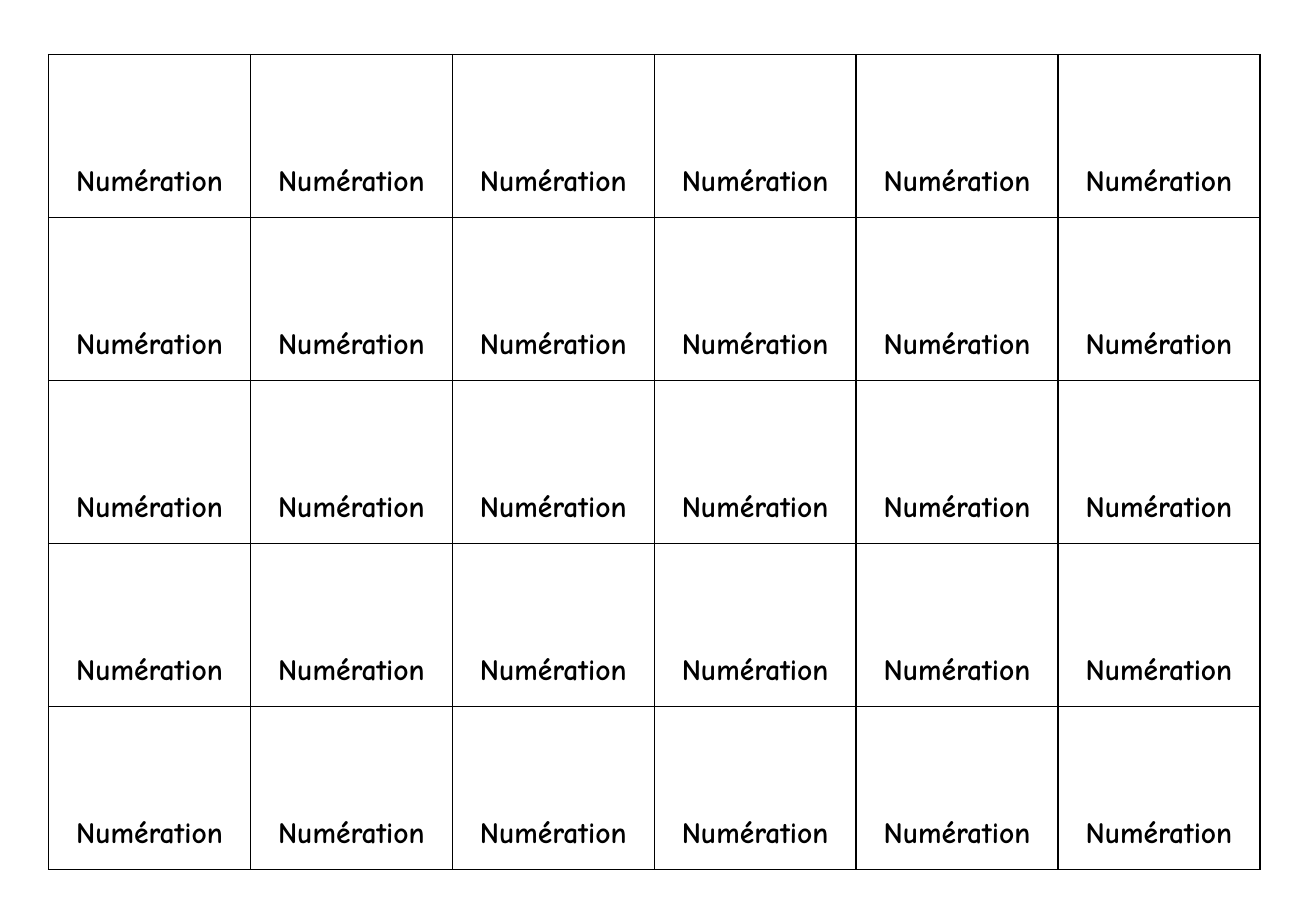
import pptx
import pptx.dml.color
import pptx.enum.text
import pptx.oxml
import pptx.oxml.ns
import pptx.util

Inches = pptx.util.Inches
COLORS = {"paper": "FFFFFF", "ink": "000000"}
FONT = "Comic Neue"
LABEL = "Numération"
ROWS, COLUMNS = 5, 6


def rgb(name):
    return pptx.dml.color.RGBColor.from_string(COLORS[name])


def write_text(frame, text, size, color, bold=False,
               align=pptx.enum.text.PP_ALIGN.CENTER):
    para = frame.paragraphs[0]
    para.alignment = align
    span = para.add_run()
    span.text = text
    span.font.name = FONT
    span.font.size = pptx.util.Pt(size)
    span.font.bold = bold
    span.font.color.rgb = rgb(color)


def set_borders(cell, color, width):
    # Border lines come before the fill in the cell properties
    properties = cell._tc.get_or_add_tcPr()
    for index, side in enumerate(("lnL", "lnR", "lnT", "lnB")):
        properties.insert(index, pptx.oxml.parse_xml(
            f'<a:{side} {pptx.oxml.ns.nsdecls("a")} w="{pptx.util.Pt(width)}">'
            f'<a:solidFill><a:srgbClr val="{COLORS[color]}"/></a:solidFill>'
            f'</a:{side}>'))


def add_label_grid(page, left, top, width, height):
    frame = page.shapes.add_table(ROWS, COLUMNS, Inches(left), Inches(top),
                                  Inches(width), Inches(height))
    table = frame.table
    table.first_row = False
    table.horz_banding = False
    for column in table.columns:
        column.width = Inches(width / COLUMNS)
    for row in table.rows:
        row.height = Inches(height / ROWS)

    # The same label at the foot of every card
    for cell in table.iter_cells():
        cell.fill.solid()
        cell.fill.fore_color.rgb = rgb("paper")
        cell.vertical_anchor = pptx.enum.text.MSO_ANCHOR.BOTTOM
        cell.margin_left = cell.margin_right = Inches(0.15)
        cell.margin_top = cell.margin_bottom = Inches(0.15)
        write_text(cell.text_frame, LABEL, size=17.5, color="ink", bold=True)
        set_borders(cell, "ink", 1)


def main():
    deck = pptx.Presentation()
    deck.slide_width = Inches(10.83)
    deck.slide_height = Inches(7.5)
    page = deck.slides.add_slide(deck.slide_layouts[6])
    add_label_grid(page, 0.4, 0.45, 9.97, 6.71)
    deck.save("out.pptx")


if __name__ == "__main__":
    main()
